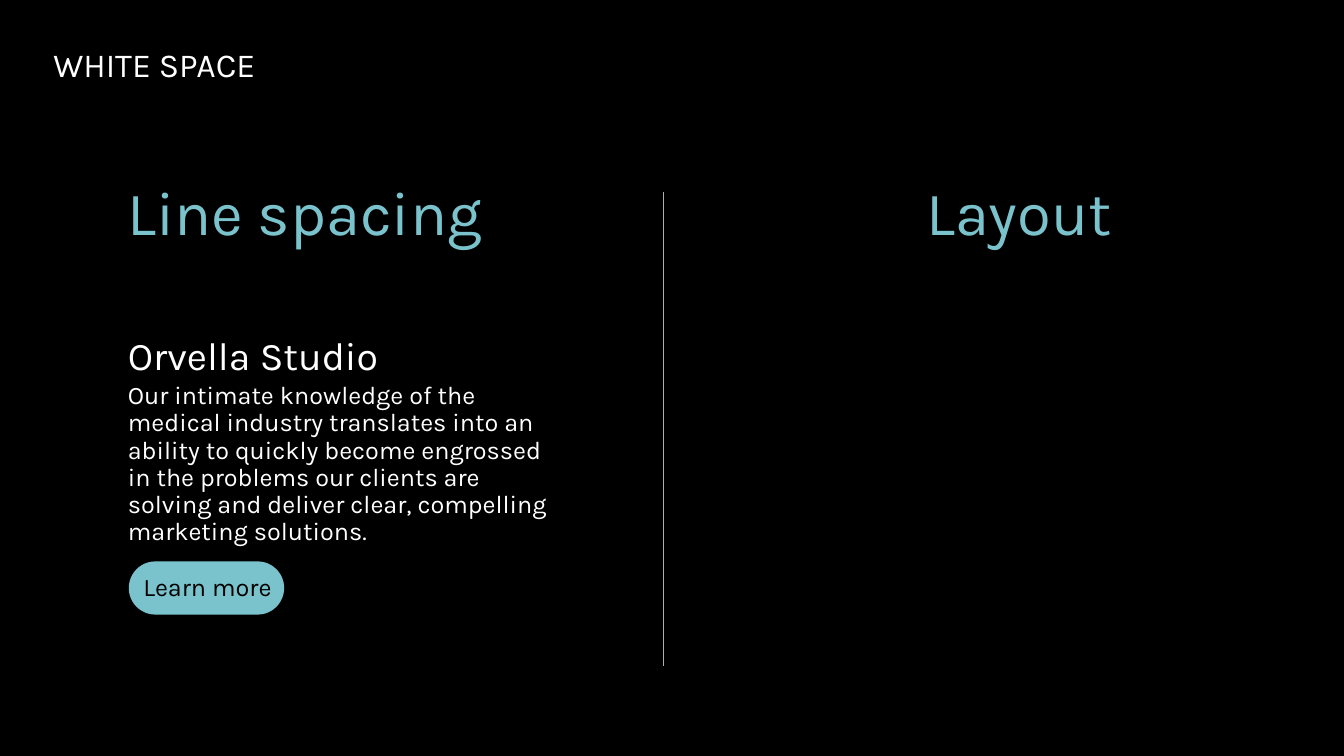
"""Build the white space slide comparing line spacing and layout."""
from lxml.etree import SubElement
from pptx import Presentation
from pptx.dml.color import RGBColor
from pptx.enum.shapes import MSO_CONNECTOR, MSO_SHAPE
from pptx.enum.text import MSO_ANCHOR, PP_ALIGN
from pptx.oxml.ns import qn
from pptx.util import Pt

BLACK = RGBColor(0x00, 0x00, 0x00)
WHITE = RGBColor(0xFF, 0xFF, 0xFF)
TEAL = RGBColor(0x7A, 0xC3, 0xCC)
GREY = RGBColor(0xAE, 0xAE, 0xAE)


def write_text(shape, text, size=18, color=WHITE, align=PP_ALIGN.LEFT,
               spacing=1.0, wrap=True, anchor=MSO_ANCHOR.TOP, left_inset=7.2):
    """Fill a shape with one formatted paragraph."""
    frame = shape.text_frame
    frame.word_wrap = wrap
    frame.vertical_anchor = anchor
    frame.margin_left = Pt(left_inset)
    paragraph = frame.paragraphs[0]
    paragraph.alignment = align
    paragraph.line_spacing = spacing
    run = paragraph.add_run()
    run.text = text
    run.font.name = "Karla"
    run.font.size = Pt(size)
    run.font.color.rgb = color


class SlideBuilder:
    """Hold the current slide and draw its elements in points."""

    def __init__(self, slide):
        self.slide = slide
        slide.background.fill.solid()
        slide.background.fill.fore_color.rgb = BLACK

    def text(self, box, text, **style):
        """Add a text box."""
        write_text(self.slide.shapes.add_textbox(*map(Pt, box)), text, **style)

    def pill(self, box, text):
        """Add a fully rounded button with a centred label."""
        shape = self.slide.shapes.add_shape(MSO_SHAPE.ROUNDED_RECTANGLE, *map(Pt, box))
        shape.adjustments[0] = 0.5
        shape.shadow.inherit = False
        shape.fill.solid()
        shape.fill.fore_color.rgb = TEAL
        shape.line.fill.background()
        write_text(shape, text, color=BLACK, align=PP_ALIGN.CENTER, spacing=0.9,
                   wrap=False, anchor=MSO_ANCHOR.MIDDLE, left_inset=8.5)

    def divider(self, x, top, bottom):
        """Add a vertical dividing line."""
        line = self.slide.shapes.add_connector(
            MSO_CONNECTOR.STRAIGHT, Pt(x), Pt(top), Pt(x), Pt(bottom))
        line.line.color.rgb = GREY
        line.line.width = Pt(1)
        SubElement(line._element.spPr, qn("a:effectLst"))


def main():
    """Create and save the presentation."""
    presentation = Presentation()
    presentation.slide_width, presentation.slide_height = Pt(960), Pt(540)
    builder = SlideBuilder(presentation.slides.add_slide(presentation.slide_layouts[6]))

    builder.text((31, 27.5, 181, 36), "WHITE SPACE", size=24, wrap=False)
    for left, heading, inset in ((82, "Line spacing", 0), (588.5, "Layout", 7.2)):
        builder.text((left, 120.5, 279, 60.5), heading, size=44, color=TEAL,
                     align=PP_ALIGN.CENTER, left_inset=inset)
    builder.divider(473.75, 137, 476)
    builder.text(
        (84.25, 270, 325, 125),
        "Our intimate knowledge of the medical industry translates into an ability "
        "to quickly become engrossed in the problems our clients are solving and "
        "deliver clear, compelling marketing solutions.", spacing=0.9)
    builder.text((84.25, 237, 325, 38), "Orvella Studio", size=28, spacing=0.9)
    builder.pill((92, 401, 111, 38), "Learn more")
    presentation.save("out.pptx")


if __name__ == "__main__":
    main()
